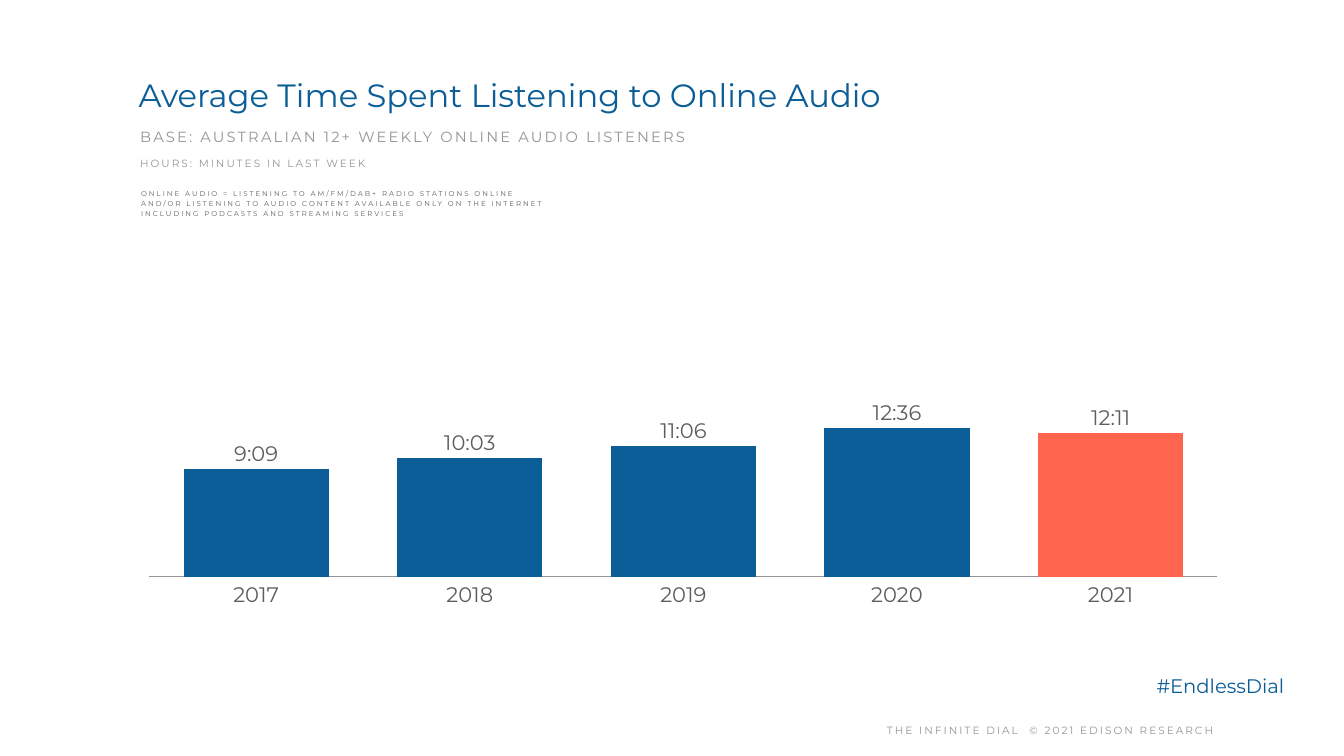
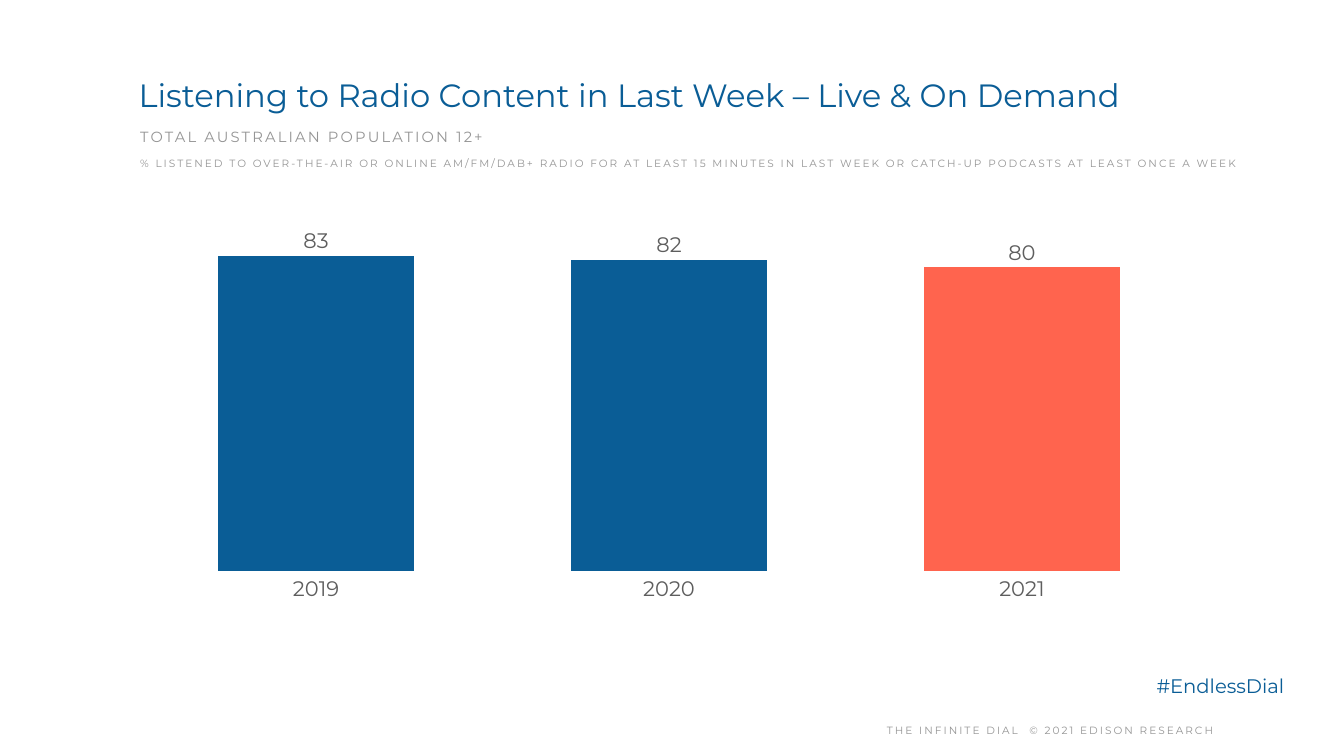
"""Build two slides on online audio and radio listening."""
from dataclasses import dataclass

from lxml import etree
from pptx import Presentation
from pptx import util as u
from pptx.chart.data import CategoryChartData
from pptx.dml.color import RGBColor
from pptx.enum import chart as charts, text
from pptx.oxml import ns


@dataclass(frozen=True)
class Theme:
    """Colours, font and type sizes shared by the slides."""
    font: str = "Montserrat"
    blue: str = "0A5D96"
    coral: str = "FF644E"
    grey: str = "959595"
    dark: str = "5E5E5E"
    title: int = 46
    chart: int = 30
    hashtag: int = 28
    base: int = 21
    small: int = 15
    note: int = 10
    wide: float = 2.9
    inset: float = 0.08


THEME = Theme()
TOP, MIDDLE = text.MSO_ANCHOR.TOP, text.MSO_ANCHOR.MIDDLE


def set_font(font, size, colour):
    """Apply the theme font with a size and colour."""
    font.name = THEME.font
    font.size = u.Pt(size)
    font.color.rgb = RGBColor.from_string(colour)


def add_text(page, words, place, size, colour, tracking=0, spacing=1.0,
             anchor=TOP, align=text.PP_ALIGN.LEFT, insets=(THEME.inset,) * 4, grow=False):
    """Add a one-paragraph text box."""
    box = page.shapes.add_textbox(*map(u.Inches, place))
    frame = box.text_frame
    frame.word_wrap = True
    frame.auto_size = text.MSO_AUTO_SIZE.SHAPE_TO_FIT_TEXT if grow else text.MSO_AUTO_SIZE.NONE
    frame.vertical_anchor = anchor
    (frame.margin_left, frame.margin_top,
     frame.margin_right, frame.margin_bottom) = map(u.Inches, insets)
    frame.text = words
    para = frame.paragraphs[0]
    para.alignment = align
    para.line_spacing = spacing
    span = para.runs[0]
    set_font(span.font, size, colour)
    if tracking:
        span.font._element.set("spc", str(round(tracking * 100)))


def add_headings(page, title, base, measure):
    """Add the title, the survey base and the measure."""
    add_text(page, title, (2.67, 1.41, 21.69, 1.23), THEME.title, THEME.blue)
    add_text(page, base, (2.7, 2.38, 22.55, 0.58), THEME.base, THEME.grey,
             3.1, 1.2, MIDDLE, grow=True)
    add_text(page, measure, (2.7, 2.98, 22.08, 0.46), THEME.small, THEME.grey,
             THEME.wide, 1.2, MIDDLE, grow=True)


def add_footer(page):
    """Add the copyright line and the hashtag."""
    add_text(page, "THE INFINITE DIAL  © 2021 EDISON RESEARCH", (14.95, 14.21, 11.78, 0.53),
             THEME.small, THEME.grey, THEME.wide, 1.2, MIDDLE, text.PP_ALIGN.CENTER)
    add_text(page, "#EndlessDial", (22.87, 13.25, 3.29, 0.68),
             THEME.hashtag, THEME.blue, spacing=1.1)


def set_plot_area(chart, place):
    """Fix the inner plot area as fractions of the chart."""
    plot_area = chart._chartSpace.find(".//" + ns.qn("c:plotArea"))
    for old in plot_area.findall(ns.qn("c:layout")):
        plot_area.remove(old)
    layout = etree.Element(ns.qn("c:layout"))
    manual = etree.SubElement(layout, ns.qn("c:manualLayout"))
    settings = [("layoutTarget", "inner"), ("xMode", "edge"), ("yMode", "edge"),
                *zip("xywh", place)]
    for name, value in settings:
        etree.SubElement(manual, ns.qn("c:" + name)).set("val", str(value))
    plot_area.insert(0, layout)


def add_columns(page, place, plot_place, years, values, number_format,
                top, step, gap, overlap=0, baseline=False):
    """Add a column chart whose latest year stands out."""
    data = CategoryChartData(number_format=number_format)
    data.categories = years
    data.add_series("Series 1", values)
    frame = page.shapes.add_chart(charts.XL_CHART_TYPE.COLUMN_CLUSTERED,
                                  *map(u.Inches, place), data)
    chart = frame.chart
    chart.has_title = chart.has_legend = False
    set_font(chart.font, THEME.chart, THEME.dark)
    set_plot_area(chart, plot_place)

    scale = chart.value_axis
    scale.visible = scale.has_major_gridlines = False
    scale.minimum_scale, scale.maximum_scale, scale.major_unit = 0, top, step

    axis = chart.category_axis
    axis.major_tick_mark = axis.minor_tick_mark = charts.XL_TICK_MARK.NONE
    axis.tick_label_position = charts.XL_TICK_LABEL_POSITION.LOW
    set_font(axis.tick_labels.font, THEME.chart, THEME.dark)
    if baseline:
        axis.format.line.color.rgb = RGBColor.from_string(THEME.grey)
        axis.format.line.width = u.Pt(1.5)
    else:
        axis.format.line.fill.background()

    plot = chart.plots[0]
    plot.gap_width, plot.overlap, plot.vary_by_categories = gap, overlap, False
    series = plot.series[0]
    latest = series.points[len(values) - 1]
    for item, colour in ((series, THEME.blue), (latest, THEME.coral)):
        item.format.fill.solid()
        item.format.fill.fore_color.rgb = RGBColor.from_string(colour)
        item.format.line.fill.background()

    labels = series.data_labels
    labels.show_value = True
    labels.position = charts.XL_LABEL_POSITION.OUTSIDE_END
    labels.number_format, labels.number_format_is_linked = number_format, False
    set_font(labels.font, THEME.chart, THEME.dark)


def day_fraction(clock):
    """Turn hours:minutes into a fraction of a day."""
    hours, minutes = map(int, clock.split(":"))
    return round((hours * 60 + minutes) / 1440, 6)


def build_time_spent(page):
    """Show the weekly hours of online listening."""
    add_headings(page, "Average Time Spent Listening to Online Audio",
                 "BASE: AUSTRALIAN 12+ WEEKLY ONLINE AUDIO LISTENERS",
                 "HOURS: MINUTES IN LAST WEEK")
    times = ["9:09", "10:04", "11:06", "12:37", "12:11"]
    add_columns(page, (2.05, 3.84, 22.31, 8.34), (0.041, 0.102, 0.95, 0.81),
                ["2017", "2018", "2019", "2020", "2021"], [day_fraction(time) for time in times],
                "h:mm;@", top=1.2, step=0.1, gap=47, baseline=True)
    add_text(page, "ONLINE AUDIO = LISTENING TO AM/FM/DAB+ RADIO STATIONS ONLINE "
             "AND/OR LISTENING TO AUDIO CONTENT AVAILABLE ONLY ON THE INTERNET "
             "INCLUDING PODCASTS AND STREAMING SERVICES", (2.78, 3.71, 8.27, 0.63),
             THEME.note, THEME.dark, THEME.wide, 1.2, insets=(0.02, 0.02, 0.04, 0.02), grow=True)


def build_radio_reach(page):
    """Show the share listening to radio content."""
    add_headings(page, "Listening to Radio Content in Last Week – Live & On Demand",
                 "TOTAL AUSTRALIAN POPULATION 12+",
                 "% LISTENED TO OVER-THE-AIR OR ONLINE AM/FM/DAB+ RADIO FOR AT LEAST 15 MINUTES "
                 "IN LAST WEEK OR CATCH-UP PODCASTS AT LEAST ONCE A WEEK")
    add_columns(page, (2.47, 2.64, 21.42, 9.46), (0.014, 0.123, 0.981, 0.795),
                ["2019", "2020", "2021"], [83, 82, 80],
                "#,##0", top=100, step=20, gap=80, overlap=-10)


def main():
    """Build and save the deck."""
    deck = Presentation()
    deck.slide_width, deck.slide_height = u.Inches(26.67), u.Inches(15)
    for build in (build_time_spent, build_radio_reach):
        page = deck.slides.add_slide(deck.slide_layouts[6])
        add_footer(page)
        build(page)
    deck.save("out.pptx")


if __name__ == "__main__":
    main()
